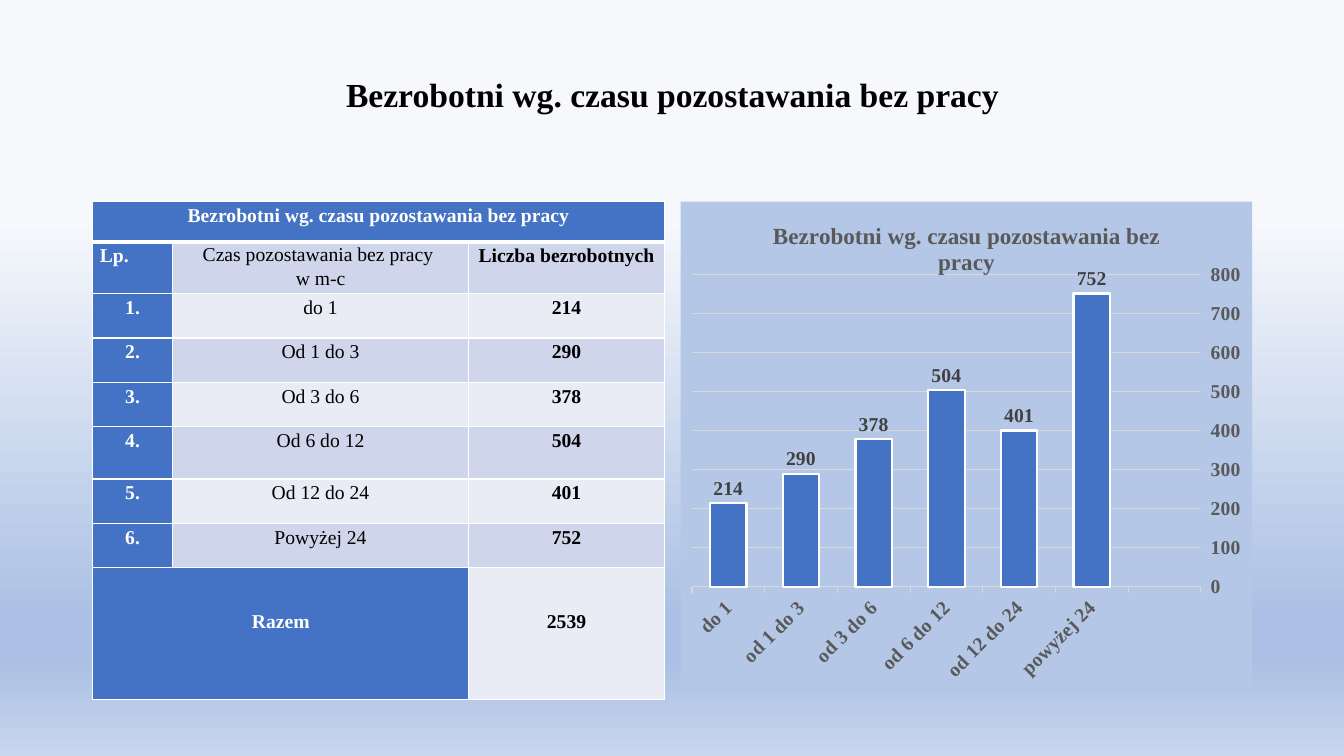
from lxml import etree
from pptx import Presentation
from pptx.chart.data import CategoryChartData
from pptx.dml.color import RGBColor
from pptx.enum.chart import XL_CHART_TYPE as ChartType
from pptx.enum.chart import XL_LABEL_POSITION as LabelPosition
from pptx.enum.chart import XL_TICK_LABEL_POSITION as TickLabelPosition
from pptx.enum.chart import XL_TICK_MARK as TickMark
from pptx.enum.text import MSO_ANCHOR as Anchor
from pptx.enum.text import PP_ALIGN as Align
from pptx.oxml import parse_xml
from pptx.oxml.ns import nsdecls, qn
from pptx.util import Inches, Pt

FONT = "Times New Roman"
HEADING = "Bezrobotni wg. czasu pozostawania bez pracy"
BLACK = RGBColor(0, 0, 0)
WHITE = RGBColor(255, 255, 255)
BLUE = RGBColor(0x44, 0x72, 0xC4)
BAND_DARK = RGBColor(0xCF, 0xD5, 0xEA)
BAND_LIGHT = RGBColor(0xE9, 0xEB, 0xF5)
AXIS_TEXT = RGBColor(0x59, 0x59, 0x59)
LABEL_TEXT = RGBColor(0x40, 0x40, 0x40)
GRID = RGBColor(0xD9, 0xD9, 0xD9)
CHART_FILL = RGBColor(0xB4, 0xC7, 0xE7)
BACKGROUND_STOPS = [
    (29, RGBColor(0xF6, 0xF8, 0xFC)),
    (82, RGBColor(0xAB, 0xC0, 0xE4)),
    (87, RGBColor(0xAB, 0xC0, 0xE4)),
    (100, RGBColor(0xC7, 0xD5, 0xED)),
]
PERIODS = ["do 1", "Od 1 do 3", "Od 3 do 6", "Od 6 do 12", "Od 12 do 24", "Powyżej 24"]
COUNTS = [214, 290, 378, 504, 401, 752]
COLUMN_WIDTHS = [0.79, 2.94, 1.94]
ROW_HEIGHTS = [0.4, 0.44, 0.44, 0.44, 0.44, 0.52, 0.44, 0.44, 1.31]


def style_font(font, size, color, bold=True):
    font.name = FONT
    font.size = Pt(size)
    font.bold = bold
    font.color.rgb = color


def paint_background(slide):
    fill = slide.background.fill
    fill.gradient()
    fill.gradient_angle = 270
    stop_list = next(slide.element.iter(qn("a:gsLst")))
    for stop in list(stop_list):
        stop_list.remove(stop)
    for position, color in BACKGROUND_STOPS:
        stop = etree.SubElement(stop_list, qn("a:gs"), pos=str(position * 1000))
        etree.SubElement(stop, qn("a:srgbClr"), val=str(color))


def add_title(slide, left, top, width, height):
    text_frame = slide.shapes.add_textbox(left, top, width, height).text_frame
    text_frame.word_wrap = True
    text_frame.vertical_anchor = Anchor.MIDDLE
    text_frame.text = HEADING
    paragraph = text_frame.paragraphs[0]
    paragraph.alignment = Align.CENTER
    paragraph.line_spacing = 0.9
    style_font(paragraph.runs[0].font, 24, BLACK)


def add_borders(cell, top=1, bottom=1):
    properties = cell._tc.get_or_add_tcPr()
    widths = {"lnL": 1, "lnR": 1, "lnT": top, "lnB": bottom}
    for index, (side, width) in enumerate(widths.items()):
        properties.insert(index, parse_xml(
            f'<a:{side} {nsdecls("a")} w="{Pt(width)}"><a:solidFill>'
            f'<a:srgbClr val="{WHITE}"/></a:solidFill></a:{side}>'))


def fill_cell(cell, text, fill, color, bold=True, align=Align.CENTER):
    cell.fill.solid()
    cell.fill.fore_color.rgb = fill
    cell.margin_left = cell.margin_right = Inches(0.07)
    cell.margin_top = cell.margin_bottom = 0
    cell.text_frame.text = text
    paragraph = cell.text_frame.paragraphs[0]
    paragraph.alignment = align
    paragraph.line_spacing = 1.1 if "\v" in text else 1.15
    paragraph.space_after = Pt(10)
    for run in paragraph.runs:
        style_font(run.font, 14, color, bold)


def add_period_table(slide, left, top, width, height):
    rows = [
        [HEADING, "", ""],
        ["Lp.", "Czas pozostawania bez pracy \vw m-c", "Liczba bezrobotnych"],
    ]
    for number, (period, count) in enumerate(zip(PERIODS, COUNTS), 1):
        rows.append([f"{number}.", period, str(count)])
    rows.append(["Razem", "", str(sum(COUNTS))])
    last = len(rows) - 1

    table = slide.shapes.add_table(len(rows), 3, left, top, width, height).table
    for column, column_width in zip(table.columns, COLUMN_WIDTHS):
        column.width = Inches(column_width)
    for row, row_height in zip(table.rows, ROW_HEIGHTS):
        row.height = Inches(row_height)
    for r, texts in enumerate(rows):
        band = BAND_DARK if r % 2 else BAND_LIGHT
        for c, text in enumerate(texts):
            cell = table.cell(r, c)
            is_header = r == 0 or c == 0
            fill_cell(cell, text, BLUE if is_header else band,
                      WHITE if is_header else BLACK, bold=is_header or c == 2,
                      align=Align.JUSTIFY if text == "Lp." else Align.CENTER)
            add_borders(cell, top=3 if r == 1 else 1, bottom=3 if r == 0 else 1)
            if r == last:
                cell.margin_top = Inches(0.4)
    table.cell(0, 0).merge(table.cell(0, 2))
    table.cell(last, 0).merge(table.cell(last, 1))


def style_axes(chart):
    category_axis, value_axis = chart.category_axis, chart.value_axis
    for axis in (category_axis, value_axis):
        style_font(axis.tick_labels.font, 14, AXIS_TEXT)
        axis.major_tick_mark = TickMark.OUTSIDE
    category_axis.format.line.color.rgb = GRID
    category_axis.format.line.width = Pt(0.75)
    next(category_axis._element.iter(qn("a:bodyPr"))).set("rot", "-2700000")
    value_axis.tick_label_position = TickLabelPosition.HIGH
    value_axis.minimum_scale = 0
    value_axis.maximum_scale = 800
    value_axis.major_unit = 100
    value_axis.format.line.fill.background()
    grid_line = value_axis.major_gridlines.format.line
    grid_line.color.rgb = GRID
    grid_line.width = Pt(0.75)


def style_bars(plot):
    plot.gap_width = 100
    plot.vary_by_categories = False
    series = plot.series[0]
    series.invert_if_negative = False
    series.format.fill.solid()
    series.format.fill.fore_color.rgb = BLUE
    series.format.line.color.rgb = WHITE
    series.format.line.width = Pt(1.5)
    labels = series.data_labels
    labels.show_value = True
    labels.position = LabelPosition.OUTSIDE_END
    style_font(labels.font, 14, LABEL_TEXT)


def add_period_chart(slide, left, top, width, height):
    data = CategoryChartData()
    data.categories = [period.replace("O", "o").replace("P", "p") for period in PERIODS] + [""]
    data.add_series("Series 1", COUNTS + [None])
    chart = slide.shapes.add_chart(
        ChartType.COLUMN_CLUSTERED, left, top, width, height, data).chart
    style_font(chart.font, 14, BLACK)
    chart.has_legend = False
    chart.has_title = True
    chart.chart_title.include_in_layout = False
    chart.chart_title.text_frame.text = HEADING
    style_font(chart.chart_title.text_frame.paragraphs[0].runs[0].font, 16.5, AXIS_TEXT)
    style_axes(chart)
    style_bars(chart.plots[0])

    chart_space = chart._chartSpace
    chart_space.find(qn("c:chart")).addnext(parse_xml(
        f'<c:spPr {nsdecls("c", "a")}><a:solidFill><a:srgbClr val="{CHART_FILL}"/>'
        '</a:solidFill><a:ln><a:noFill/></a:ln></c:spPr>'))
    plot_area = next(chart_space.iter(qn("c:plotArea")))
    for old_layout in plot_area.findall(qn("c:layout")):
        plot_area.remove(old_layout)
    layout = etree.Element(qn("c:layout"))
    manual = etree.SubElement(layout, qn("c:manualLayout"))
    settings = {"layoutTarget": "inner", "xMode": "edge", "yMode": "edge",
                "x": 0.02, "y": 0.15, "w": 0.89, "h": 0.64}
    for name, value in settings.items():
        etree.SubElement(manual, qn(f"c:{name}"), val=str(value))
    plot_area.insert(0, layout)


def main():
    presentation = Presentation()
    presentation.slide_width = Inches(13.33)
    presentation.slide_height = Inches(7.5)
    slide = presentation.slides.add_slide(presentation.slide_layouts[6])
    paint_background(slide)
    add_title(slide, Inches(0.92), Inches(0.23), Inches(11.5), Inches(1.45))
    add_period_table(slide, Inches(0.92), Inches(2), Inches(5.67), Inches(4.92))
    add_period_chart(slide, Inches(6.75), Inches(2), Inches(5.67), Inches(4.84))
    presentation.save("out.pptx")


if __name__ == "__main__":
    main()
